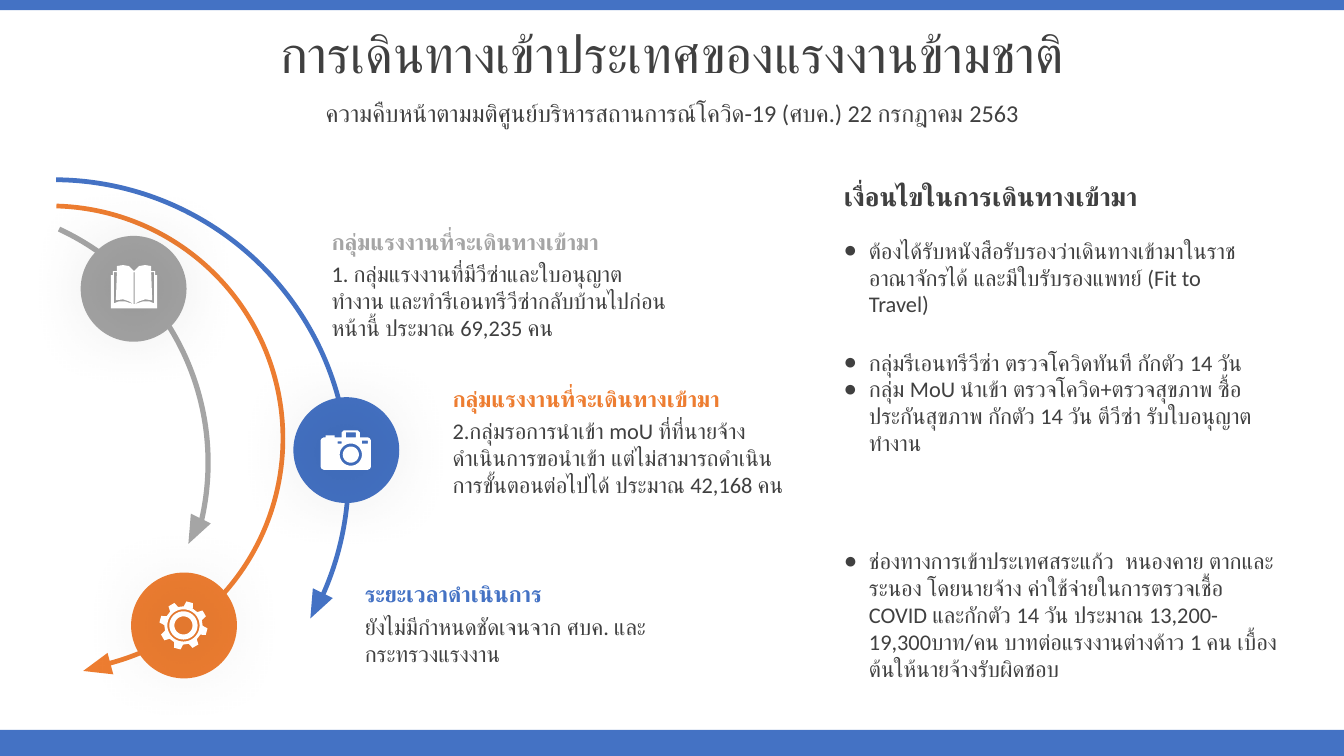
from math import cos, pi, radians, sin

from lxml import etree
from pptx import Presentation
from pptx.dml.color import RGBColor
from pptx.enum.shapes import MSO_SHAPE
from pptx.enum.text import MSO_ANCHOR, PP_ALIGN
from pptx.oxml.ns import qn
from pptx.util import Inches, Pt

BLUE = RGBColor(0x44, 0x72, 0xC4)
ORANGE = RGBColor(0xED, 0x7D, 0x31)
GRAY = RGBColor(0xA5, 0xA5, 0xA5)
DARK = RGBColor(0x40, 0x40, 0x40)
WHITE = RGBColor(0xFF, 0xFF, 0xFF)
RECTANGLE, OVAL = MSO_SHAPE.RECTANGLE, MSO_SHAPE.OVAL
ARC, TRIANGLE = MSO_SHAPE.BLOCK_ARC, MSO_SHAPE.ISOSCELES_TRIANGLE
LEFT, CENTER = PP_ALIGN.LEFT, PP_ALIGN.CENTER
TOP, MIDDLE = MSO_ANCHOR.TOP, MSO_ANCHOR.MIDDLE

deck = Presentation()
deck.slide_width, deck.slide_height = Inches(13.33), Inches(7.5)
page = deck.slides.add_slide(deck.slide_layouts[5])


def add_solid(kind, left, top, width, height, color):
    shape = page.shapes.add_shape(
        kind, Inches(left), Inches(top), Inches(width), Inches(height))
    shape.shadow.inherit = False
    shape.fill.solid()
    shape.fill.fore_color.rgb = color
    shape.line.fill.background()
    return shape


def add_text(text, left, top, width, height, box=None, size=16, color=DARK,
             bold=False, align=LEFT, anchor=TOP, spacing=None, bullet=False):
    box = box or page.shapes.add_textbox(0, 0, 0, 0)
    box.left, box.top = Inches(left), Inches(top)
    box.width, box.height = Inches(width), Inches(height)
    frame = box.text_frame
    frame.word_wrap = True
    frame.vertical_anchor = anchor
    frame.text = text
    for para in frame.paragraphs:
        para.alignment = align
        if spacing:
            para.line_spacing = spacing
            para.space_before = Pt(10)
        if bullet:
            properties = para._p.get_or_add_pPr()
            properties.set("marL", str(Inches(0.25)))
            properties.set("indent", str(-Inches(0.25)))
            etree.SubElement(properties, qn("a:buFont")).set("typeface", "Arial")
            etree.SubElement(properties, qn("a:buChar")).set("char", "●")
        font = para.runs[0].font
        font.name, font.size, font.bold = "Calibri", Pt(size), bold
        font.color.rgb = color


# Bars at the slide's edges
add_solid(RECTANGLE, 0, 7.24, 13.33, 0.26, BLUE)
add_solid(RECTANGLE, 0, 0, 13.33, 0.1, BLUE)

# Title and subtitle
add_text("การเดินทางเข้าประเทศของแรงงานข้ามชาติ", 0, 0.18, 13.33, 0.84,
         box=page.shapes.title, size=37.2, align=CENTER, anchor=MIDDLE, spacing=0.7)
add_text("ความคืบหน้าตามมติศูนย์บริหารสถานการณ์โควิด-19 (ศบค.) 22 กรกฎาคม 2563",
         0, 0.94, 13.33, 0.42, size=17.3, align=CENTER, anchor=MIDDLE, spacing=0.7)

# Circles
for left, top, color in [(1.3, 5.68, ORANGE), (0.8, 2.34, GRAY), (2.91, 3.94, BLUE)]:
    add_solid(OVAL, left, top, 1.05, 1.05, color)

# Arcs with arrowheads: arc box, start and end degrees, thickness, head place
arcs = [
    (-1.83, 2.02, 4.66, 271.51, 76.28, 0.01, 0.85, 6.48, 255, ORANGE),
    (-2.42, 1.76, 5.9, 270.55, 23.84, 0.008, 3.03, 5.87, 206.2, BLUE),
    (-3.07, 2.01, 5.16, 294.91, 14.16, 0.01, 1.82, 5.13, 206.2, GRAY),
]
for left, top, size, start, end, thickness, head_left, head_top, turn, color in arcs:
    arc = add_solid(ARC, left, top, size, size, color)
    arc.adjustments[0] = start * 0.6
    arc.adjustments[1] = end * 0.6
    arc.adjustments[2] = thickness
    head = add_solid(TRIANGLE, head_left, head_top, 0.22, 0.28, color)
    head.rotation = turn

# Icon outlines: the first contour is the body, later ones cut into it
circle = [(cos(step * pi / 24), sin(step * pi / 24)) for step in range(48)]

spine = 1.33
left_cover = [(1.1, 3.06), (1.1, 2.73), (1.12, 2.73), (1.12, 2.69), (1.16, 2.69),
              (1.16, 2.64), (1.22, 2.63), (1.28, 2.64), (spine, 2.69)]
left_page = [(1.16, 2.7), (1.13, 2.7), (1.13, 3.01), (1.18, 2.99), (1.24, 2.99),
             (spine, 3.02), (1.28, 2.99), (1.22, 2.97), (1.15, 2.98)]
right_cover = [(2 * spine - x, y) for x, y in reversed(left_cover[:-1])]
right_page = [(2 * spine - x, y) for x, y in left_page]
fold = [(1.325, 2.7), (1.335, 2.7), (1.335, 3.02), (1.325, 3.02)]
book = [left_cover + right_cover, left_page, right_page, fold]

gear_teeth = [
    (1.82 + radius * cos(radians(45 * tooth - 75 + offset)),
     6.205 + radius * sin(radians(45 * tooth - 75 + offset)))
    for tooth in range(8)
    for offset, radius in [(-14, 0.19), (-8, 0.24), (8, 0.24), (14, 0.19)]]
gear = [gear_teeth] + [[(1.82 + radius * x, 6.205 + radius * y) for x, y in circle]
                       for radius in (0.16, 0.14, 0.09)]

camera_body = [(3.18, 4.37), (3.19, 4.35), (3.21, 4.34), (3.23, 4.34), (3.23, 4.32),
               (3.32, 4.32), (3.32, 4.34), (3.39, 4.34), (3.39, 4.29), (3.41, 4.27),
               (3.55, 4.27), (3.57, 4.29), (3.57, 4.34), (3.65, 4.34), (3.67, 4.35),
               (3.68, 4.37), (3.68, 4.63), (3.67, 4.65), (3.65, 4.66), (3.21, 4.66),
               (3.19, 4.65), (3.18, 4.63)]
camera_windows = [
    [(left, top), (right, top), (right, bottom), (left, bottom)]
    for left, top, right, bottom in [(3.35, 4.38, 3.39, 4.4), (3.59, 4.37, 3.65, 4.4),
                                     (3.43, 4.29, 3.53, 4.34)]]
camera_lens = [[(3.48 + radius * x, 4.51 + radius * y) for x, y in circle]
               for radius in (0.11, 0.08)]
camera = [camera_body] + camera_windows + camera_lens

# Icons with a wide soft shadow
for contours in (book, gear, camera):
    builder = None
    for contour in contours:
        points = [(Inches(x), Inches(y)) for x, y in contour]
        if builder is None:
            builder = page.shapes.build_freeform(*points[0])
        else:
            builder.move_to(*points[0])
        builder.add_line_segments(points[1:], close=True)
    icon = builder.convert_to_shape()
    icon.fill.solid()
    icon.fill.fore_color.rgb = WHITE
    icon.line.fill.background()
    icon.shadow.inherit = False
    effects = icon._element.spPr.find(qn("a:effectLst"))
    shadow = etree.SubElement(effects, qn("a:outerShdw"), blurRad=str(Pt(63)),
                              dist="0", dir="0", algn="ctr", rotWithShape="0")
    tint = etree.SubElement(shadow, qn("a:srgbClr"), val="000000")
    etree.SubElement(tint, qn("a:alpha"), val="40000")

# Headed texts beside the arcs
topics = [
    (3.19, 2.21, 1.23, GRAY, "กลุ่มแรงงานที่จะเดินทางเข้ามา",
     "1. กลุ่มแรงงานที่มีวีซ่าและใบอนุญาตทำงาน และทำรีเอนทรีวีซ่ากลับบ้านไปก่อนหน้านี้ ประมาณ 69,235 คน"),
    (4.39, 3.77, 1.61, ORANGE, "กลุ่มแรงงานที่จะเดินทางเข้ามา",
     "2.กลุ่มรอการนำเข้า moU ที่ที่นายจ้างดำเนินการขอนำเข้า แต่ไม่สามารถดำเนินการขั้นตอนต่อไปได้ ประมาณ 42,168 คน"),
    (3.52, 5.71, 0.85, BLUE, "ระยะเวลาดำเนินการ",
     "ยังไม่มีกำหนดชัดเจนจาก ศบค. และกระทรวงแรงงาน"),
]
for left, top, height, color, heading, detail in topics:
    add_text(detail, left, top + 0.32, 3.57, height)
    add_text(heading, left, top, 3.57, 0.48, color=color, bold=True)

# Entry conditions
add_text("เงื่อนไขในการเดินทางเข้ามา", 8.27, 1.74, 4.09, 0.54, size=18.7, bold=True)
conditions = [
    (2.3, 4.3, 1.12,
     "ต้องได้รับหนังสือรับรองว่าเดินทางเข้ามาในราชอาณาจักรได้ และมีใบรับรองแพทย์ (Fit to Travel)"),
    (3.41, 4.3, 1.99,
     "กลุ่มรีเอนทรีวีซ่า ตรวจโควิดทันที กักตัว 14 วัน\n"
     "กลุ่ม MoU นำเข้า ตรวจโควิด+ตรวจสุขภาพ ซื้อประกันสุขภาพ กักตัว 14 วัน ตีวีซ่า รับใบอนุญาตทำงาน"),
    (5.38, 4.58, 1.99,
     "ช่องทางการเข้าประเทศสระแก้ว  หนองคาย ตากและระนอง โดยนายจ้าง ค่าใช้จ่ายในการตรวจเชื้อ COVID "
     "และกักตัว 14 วัน ประมาณ 13,200-19,300บาท/คน บาทต่อแรงงานต่างด้าว 1 คน เบื้องต้นให้นายจ้างรับผิดชอบ"),
]
for top, width, height, text in conditions:
    add_text(text, 8.27, top, width, height, bullet=True)

deck.save("out.pptx")
